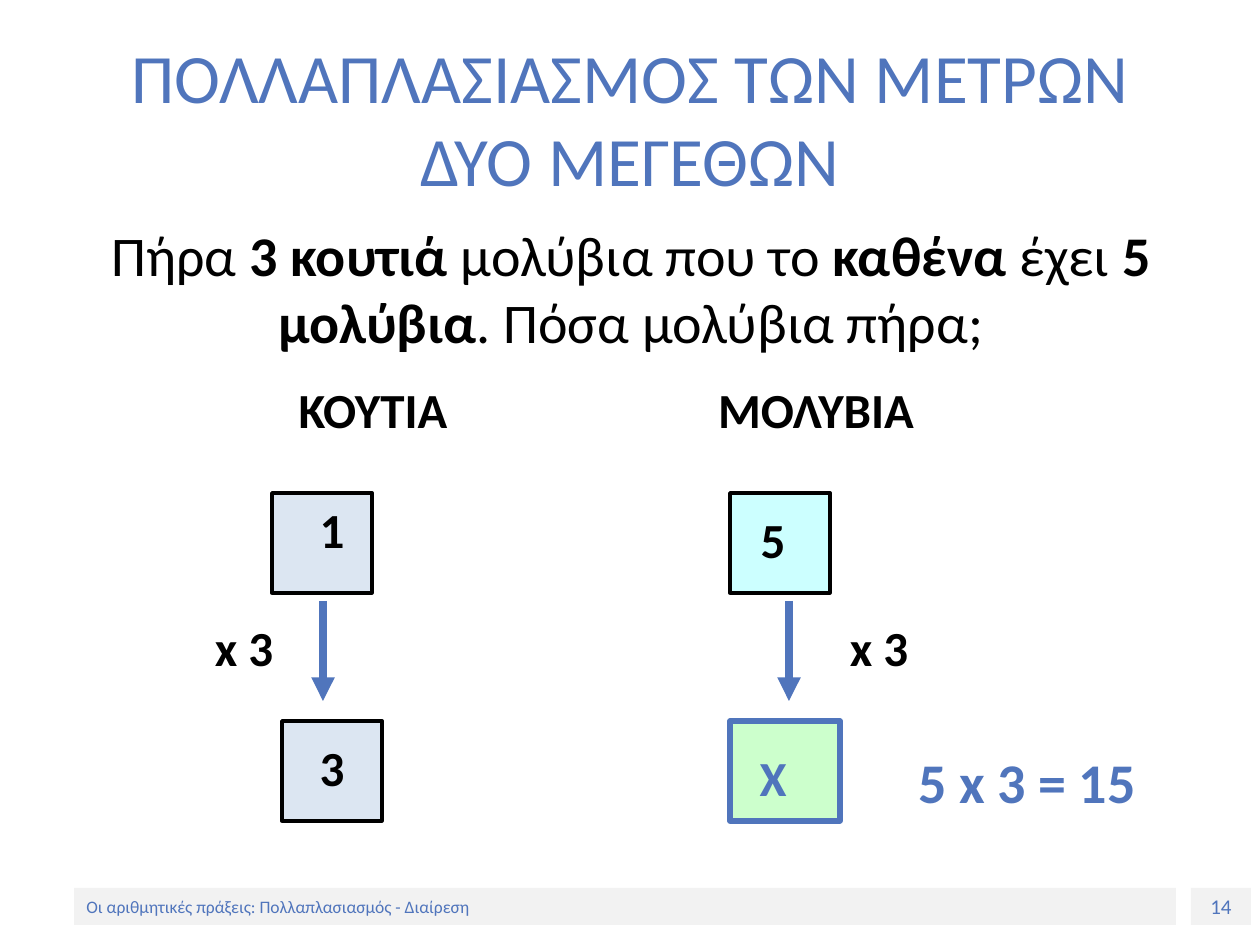
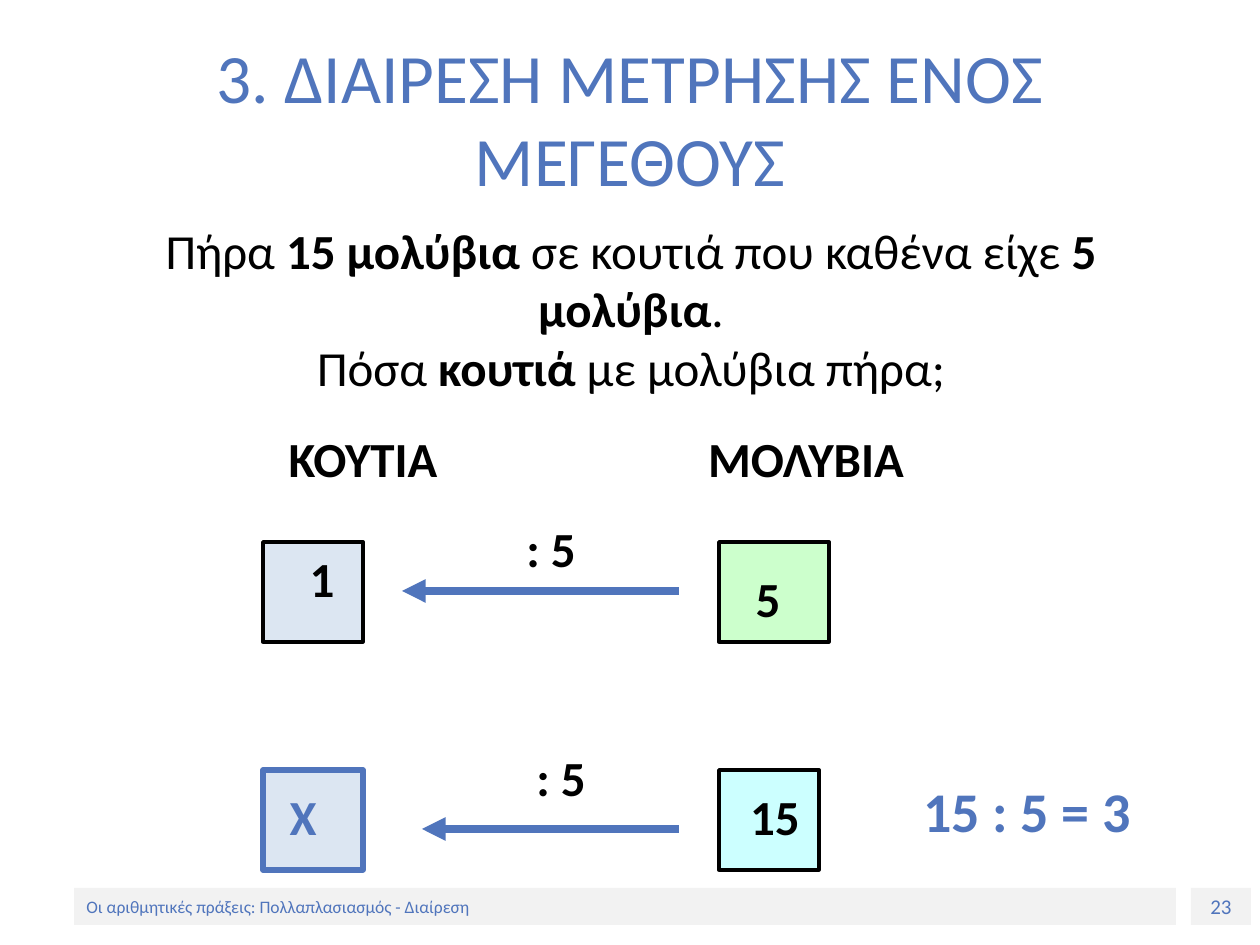
"""Build two slides that solve pencil-and-box problems by multiplying and dividing."""
from lxml import etree
from pptx import Presentation, util as u
from pptx.dml.color import RGBColor
from pptx.enum import shapes, text
from pptx.oxml.ns import qn

SCALE = 914400 / 126
FONT = "Calibri"
FOOTER = "Οι αριθμητικές πράξεις: Πολλαπλασιασμός - Διαίρεση"
SIDE = 100
WIDE = 110
COLORS = {
    "accent": "5075BC",
    "ink": "000000",
    "band": "F2F2F2",
    "blue": "DCE6F2",
    "cyan": "CCFFFF",
    "green": "CCFFCC",
}


def px(*lengths):
    """Turn pixel lengths into EMU."""
    return [u.Emu(round(length * SCALE)) for length in lengths]


def rgb(name):
    """Return the named colour."""
    return RGBColor.from_string(COLORS[name])


def style(para, size, color="ink", bold=None, align=text.PP_ALIGN.CENTER):
    """Set the font and alignment of a paragraph."""
    para.alignment = align
    para.font.name = FONT
    para.font.size = u.Pt(size)
    para.font.color.rgb = rgb(color)
    para.font.bold = bold


def add_rectangle(page, left, top, width, height, fill):
    """Add a flat rectangle without an outline."""
    box = page.shapes.add_shape(
        shapes.MSO_SHAPE.RECTANGLE, *px(left, top, width, height))
    box.shadow.inherit = False
    box.fill.solid()
    box.fill.fore_color.rgb = rgb(fill)
    box.line.fill.background()
    return box


def add_band(page, left, width, words, size, align):
    """Add one grey footer band with its text."""
    box = add_rectangle(page, left, 888, width, 37, "band")
    box.text_frame.vertical_anchor = text.MSO_ANCHOR.MIDDLE
    box.text_frame.text = words
    style(box.text_frame.paragraphs[0], size, "accent", align=align)


def add_page(deck, title, number):
    """Add a slide with its title and footer bands."""
    page = deck.slides.add_slide(deck.slide_layouts[5])
    add_band(page, 1191, 60, str(number), 12, text.PP_ALIGN.CENTER)
    add_band(page, 74, 1102, FOOTER, 10, text.PP_ALIGN.LEFT)
    box = page.shapes.title
    box.left, box.top, box.width, box.height = px(63, 38, 1134, 158)
    box.text_frame.text = title
    box.text_frame.auto_size = text.MSO_AUTO_SIZE.NONE
    box.text_frame.vertical_anchor = text.MSO_ANCHOR.MIDDLE
    style(box.text_frame.paragraphs[0], 39.6, "accent")
    return page


def add_problem(page, size, height, lines):
    """Add the problem statement, whose spans alternate plain and bold."""
    box = page.shapes.add_textbox(*px(64, 214, 1134, height))
    frame = box.text_frame
    frame.word_wrap = True
    for row, spans in enumerate(lines):
        para = frame.add_paragraph() if row else frame.paragraphs[0]
        style(para, size)
        for index, words in enumerate(spans):
            span = para.add_run()
            span.text = words
            span.font.bold = index % 2 == 1


def add_label(page, words, center, top, color="ink", width=120, size=28):
    """Add bold text centred on a given x."""
    box = page.shapes.add_textbox(*px(center - width / 2, top, width, 72))
    box.text_frame.word_wrap = True
    box.text_frame.text = words
    style(box.text_frame.paragraphs[0], size, color, True)


def add_headings(page, boxes_center, top):
    """Head the columns of boxes and pencils."""
    for column, words in enumerate(("ΚΟΥΤΙΑ", "ΜΟΛΥΒΙΑ")):
        add_label(page, words, boxes_center + 443 * column, top, width=240)


def add_answer(page, words, top):
    """Add the worked result at the right."""
    add_label(page, words, 1027, top, "accent", 258, 32)


def add_quantity(page, left, top, fill, words, center, label_top,
                 width=SIDE, unknown=False):
    """Add a framed square and its number, blue when it is the unknown."""
    box = add_rectangle(page, left, top, width, SIDE, fill)
    box.line.color.rgb = rgb("accent" if unknown else "ink")
    box.line.width = u.Pt(3 if unknown else 2)
    add_label(page, words, center, label_top, "accent" if unknown else "ink")


def add_arrow(page, x1, y1, x2, y2):
    """Add a thick straight arrow."""
    arrow = page.shapes.add_connector(
        shapes.MSO_CONNECTOR.STRAIGHT, *px(x1, y1, x2, y2))
    arrow.line.color.rgb = rgb("accent")
    arrow.line.width = u.Pt(4.5)
    etree.SubElement(arrow.line._get_or_add_ln(), qn("a:tailEnd"), type="triangle")
    etree.SubElement(arrow._element.spPr, qn("a:effectLst"))


def build_multiplication(deck):
    """Build the slide on multiplying the measures of two quantities."""
    page = add_page(deck, "ΠΟΛΛΑΠΛΑΣΙΑΣΜΟΣ ΤΩΝ ΜΕΤΡΩΝ ΔΥΟ ΜΕΓΕΘΩΝ", 14)
    add_problem(page, 32, 150, [
        ("Πήρα ", "3 κουτιά ", "μολύβια που το ", "καθένα", " έχει ",
         "5 μολύβια", ". Πόσα μολύβια πήρα;")])
    add_headings(page, 373, 373)
    add_quantity(page, 272, 493, "blue", "1", 332, 493)
    add_quantity(page, 282, 721, "blue", "3", 332, 731)
    add_quantity(page, 730, 493, "cyan", "5", 773, 503)
    add_quantity(page, 730, 721, "green", "Χ", 773, 741, WIDE, True)
    for arrow_x, label_x in ((323, 244), (789, 879)):
        add_arrow(page, arrow_x, 601, arrow_x, 701)
        add_label(page, "x 3", label_x, 611)
    add_answer(page, "5 x 3 = 15", 741)


def build_division(deck):
    """Build the slide on measuring one quantity by division."""
    page = add_page(deck, "3. ΔΙΑΙΡΕΣΗ ΜΕΤΡΗΣΗΣ ΕΝΟΣ ΜΕΓΕΘΟΥΣ", 23)
    add_problem(page, 28, 200, [
        ("Πήρα ", "15 μολύβια ", "σε κουτιά που καθένα είχε ",
         "5 μολύβια", "."),
        ("Πόσα ", "κουτιά ", "με μολύβια πήρα;")])
    add_headings(page, 363, 422)
    add_quantity(page, 263, 542, "blue", "1", 322, 542)
    add_quantity(page, 263, 770, "blue", "Χ", 303, 780, unknown=True)
    add_quantity(page, 719, 542, "green", "5", 768, 562, WIDE)
    add_quantity(page, 719, 770, "cyan", "15", 775, 780)
    for tip, arrow_y, label_x, label_y in ((402, 591, 551, 512),
                                           (422, 829, 561, 741)):
        add_arrow(page, 679, arrow_y, tip, arrow_y)
        add_label(page, ": 5", label_x, label_y)
    add_answer(page, "15 : 5 = 3", 770)


def main():
    """Build and save the deck."""
    deck = Presentation()
    deck.slide_width, deck.slide_height = px(1260, 945)
    build_multiplication(deck)
    build_division(deck)
    deck.save("out.pptx")


if __name__ == "__main__":
    main()
